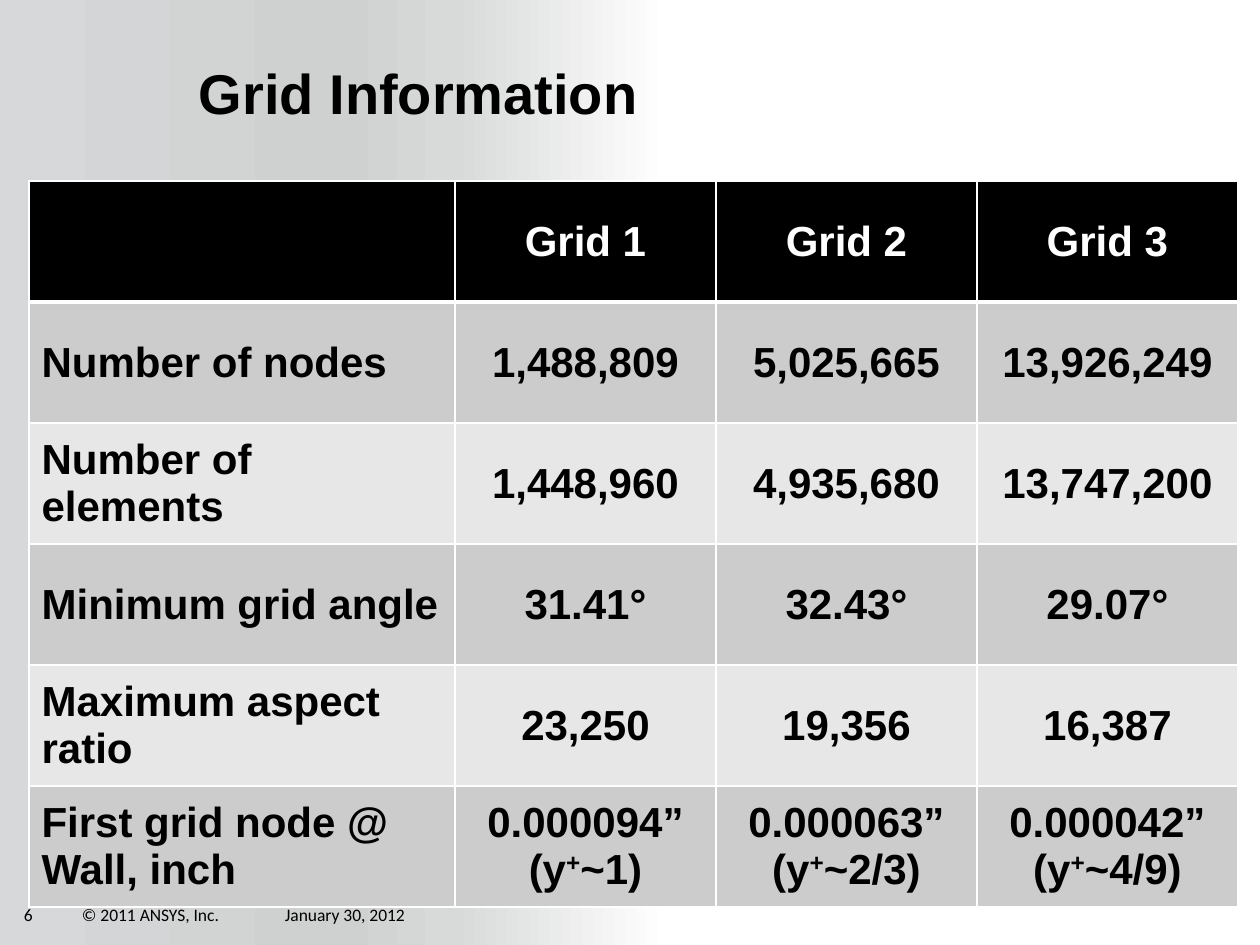
from dataclasses import dataclass

from lxml import etree
from pptx import Presentation
from pptx.dml.color import RGBColor
from pptx.enum.shapes import MSO_SHAPE
from pptx.enum.text import MSO_ANCHOR, PP_ALIGN
from pptx.oxml import parse_xml
from pptx.oxml.ns import nsdecls, qn
from pptx.util import Emu, Pt

RECTANGLE = MSO_SHAPE.RECTANGLE
MIDDLE, TOP = MSO_ANCHOR.MIDDLE, MSO_ANCHOR.TOP
LEFT, CENTER = PP_ALIGN.LEFT, PP_ALIGN.CENTER

PX_PER_INCH = 126
SLIDE_WIDTH, SLIDE_HEIGHT = 1260, 945


@dataclass(frozen=True)
class Theme:
    black: str = "000000"
    white: str = "FFFFFF"
    dark_band: str = "CCCCCC"
    light_band: str = "E7E7E7"
    backdrop_stops: tuple = ((0, "D7D8D9"), (27, "CFD0D0"), (36, "D8D9D9"), (53, "FFFFFF"))
    heading_font: str = "Arial"
    footer_font: str = "Calibri"
    title_size: int = 32
    table_size: int = 24
    footer_size: int = 10
    border: int = 1
    header_border: int = 3


THEME = Theme()

GRID_ROWS = [
    ["", "Grid 1", "Grid 2", "Grid 3"],
    ["Number of nodes", "1,488,809", "5,025,665", "13,926,249"],
    ["Number of elements", "1,448,960", "4,935,680", "13,747,200"],
    ["Minimum grid angle", "31.41°", "32.43°", "29.07°"],
    ["Maximum aspect ratio", "23,250", "19,356", "16,387"],
    ["First grid node @ Wall, inch", "0.000094”\n(y+~1)", "0.000063”\n(y+~2/3)", "0.000042”\n(y+~4/9)"],
]
COLUMN_WIDTHS = [426, 261, 261, 261]
ROW_HEIGHT = 121

FOOTERS = [
    ("6", 24, 39),
    ("© 2011 ANSYS, Inc.", 82, 204),
    ("January 30, 2012", 285, 139),
]


def px(length):
    return Emu(round(length * 914400 / PX_PER_INCH))


def style_font(font, name, size, color, bold=False):
    font.name = name
    font.size = Pt(size)
    font.bold = bold
    font.color.rgb = RGBColor.from_string(color)


def add_backdrop(slide):
    """Cover the slide with a grey that fades to white just past the middle."""
    shape = slide.shapes.add_shape(RECTANGLE, 0, 0, px(SLIDE_WIDTH), px(SLIDE_HEIGHT))
    shape.shadow.inherit = False
    shape.line.fill.background()
    shape.fill.gradient()
    shape.fill.gradient_angle = 0
    stop_list = shape._element.spPr.find(f".//{qn('a:gsLst')}")
    for stop in list(stop_list):
        stop_list.remove(stop)
    for position, color in THEME.backdrop_stops + ((100, THEME.white),):
        stop = etree.SubElement(stop_list, qn("a:gs"), pos=str(position * 1000))
        etree.SubElement(stop, qn("a:srgbClr"), val=color)


def add_text(slide, text, left, top, width, height, font_name, size, bold=False, anchor=TOP):
    box = slide.shapes.add_textbox(px(left), px(top), px(width), px(height))
    frame = box.text_frame
    frame.word_wrap = True
    frame.vertical_anchor = anchor
    frame.margin_left = frame.margin_right = frame.margin_top = frame.margin_bottom = 0
    paragraph = frame.paragraphs[0]
    paragraph.text = text
    style_font(paragraph.font, font_name, size, THEME.black, bold)
    return paragraph


def add_borders(cell, row):
    """Draw white cell edges, heavier between the header and the body."""
    properties = cell._tc.get_or_add_tcPr()
    for side in "LRTB":
        under_header = (row, side) in ((0, "B"), (1, "T"))
        width = Pt(THEME.header_border if under_header else THEME.border)
        properties.append(parse_xml(
            f'<a:ln{side} {nsdecls("a")} w="{width}"><a:solidFill>'
            f'<a:srgbClr val="{THEME.white}"/></a:solidFill></a:ln{side}>'))


def write_line(paragraph, line):
    """Write one line of a cell, raising a plus sign to superscript."""
    before, plus, after = line.partition("+")
    for part in filter(None, (before, plus, after)):
        run = paragraph.add_run()
        run.text = part
        if part == plus:
            run._r.get_or_add_rPr().set("baseline", "30000")


def fill_cell(cell, text, row, column):
    if row == 0:
        fill, color = THEME.black, THEME.white
    else:
        fill, color = (THEME.dark_band if row % 2 else THEME.light_band), THEME.black
    add_borders(cell, row)
    cell.fill.solid()
    cell.fill.fore_color.rgb = RGBColor.from_string(fill)
    cell.vertical_anchor = MIDDLE
    frame = cell.text_frame
    for index, line in enumerate(text.split("\n")):
        paragraph = frame.add_paragraph() if index else frame.paragraphs[0]
        paragraph.alignment = CENTER if column else LEFT
        write_line(paragraph, line)
        style_font(paragraph.font, THEME.heading_font, THEME.table_size, color, bold=True)


def add_grid_table(slide, left, top):
    frame = slide.shapes.add_table(
        len(GRID_ROWS), len(COLUMN_WIDTHS), px(left), px(top),
        px(sum(COLUMN_WIDTHS)), px(ROW_HEIGHT * len(GRID_ROWS)))
    table = frame.table
    for column, width in zip(table.columns, COLUMN_WIDTHS):
        column.width = px(width)
    for row, texts in enumerate(GRID_ROWS):
        table.rows[row].height = px(ROW_HEIGHT)
        for column, text in enumerate(texts):
            fill_cell(table.cell(row, column), text, row, column)


def main():
    presentation = Presentation()
    presentation.slide_width = px(SLIDE_WIDTH)
    presentation.slide_height = px(SLIDE_HEIGHT)
    slide = presentation.slides.add_slide(presentation.slide_layouts[6])

    add_backdrop(slide)
    for text, left, width in FOOTERS:
        add_text(slide, text, left, 904, width, 21, THEME.footer_font, THEME.footer_size)
    title = add_text(slide, "Grid Information", 199, 63, 982, 67,
                     THEME.heading_font, THEME.title_size, bold=True, anchor=MIDDLE)
    title.line_spacing = 0.9
    add_grid_table(slide, 29, 181)

    presentation.save("out.pptx")


if __name__ == "__main__":
    main()
